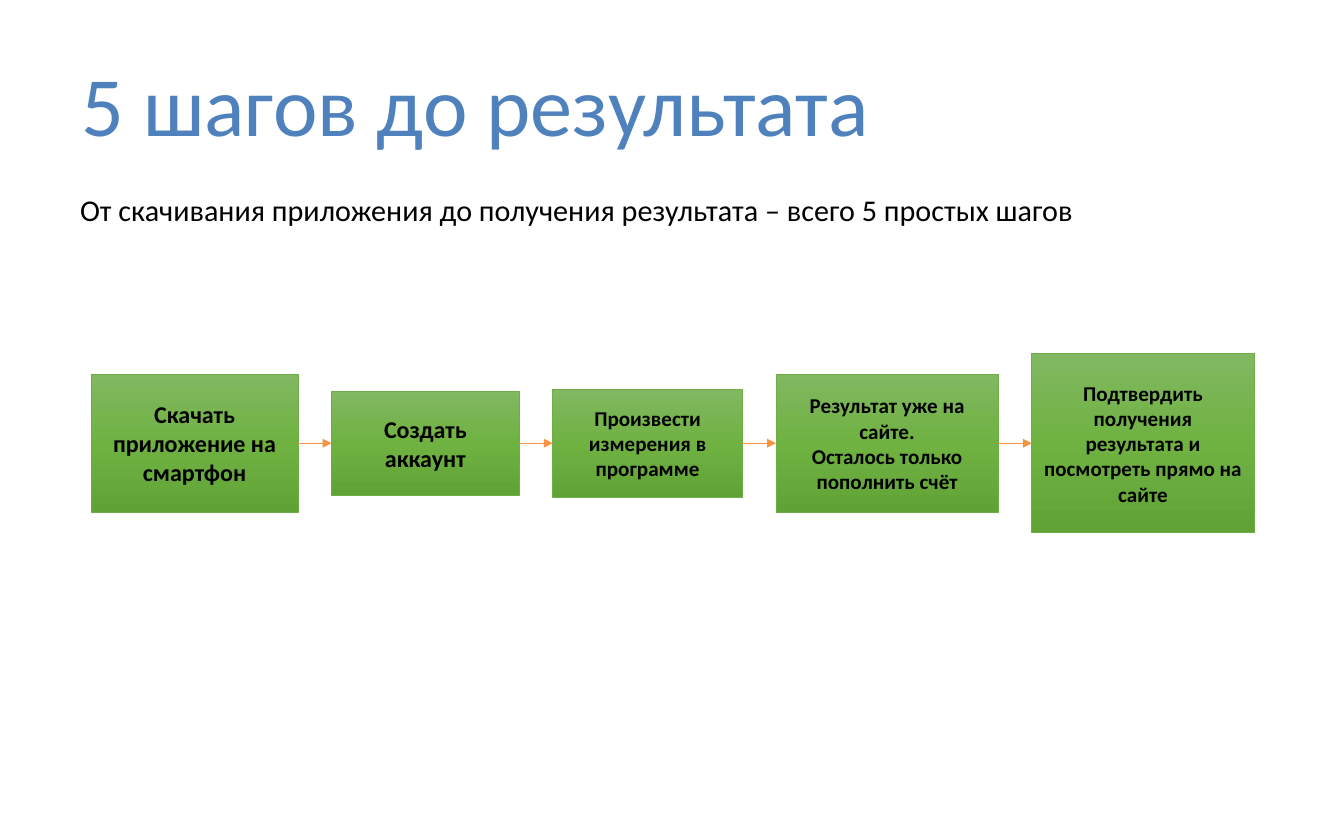
from copy import deepcopy
from dataclasses import dataclass

from pptx import Presentation
from pptx import util as u
from pptx.dml.color import RGBColor
from pptx.enum import shapes, text
from pptx.oxml import ns, xmlchemy


@dataclass(frozen=True)
class Theme:
    font: str = "Calibri"
    ink: str = "000000"
    head: str = "4F81BD"
    edge: str = "70AD47"
    arrow: str = "F69240"
    fade: tuple = ((0, "81B861"), (0.5, "6FB242"), (1, "61A235"))
    title: int = 56
    lead: int = 20
    large: int = 16
    small: int = 14


THEME = Theme()
LEFT, MID, GAP = 0.84, 4.09, 0.31

# Width, height, type size and text of each step
STEPS = (
    (1.91, 1.28, THEME.large, "Скачать приложение на смартфон"),
    (1.73, 0.96, THEME.large, "Создать аккаунт"),
    (1.75, 1.00, THEME.small, "Произвести измерения в программе"),
    (2.05, 1.28, THEME.small,
     "Результат уже на сайте.\nОсталось только пополнить счёт"),
    (2.05, 1.65, THEME.small,
     "Подтвердить получения результата и посмотреть прямо на сайте"),
)


def rgb(code):
    return RGBColor.from_string(code)


def write(frame, words, size, color, align, bold=False):
    frame.text = words
    frame.word_wrap = True
    for par in frame.paragraphs:
        par.alignment = align
        for run in par.runs:
            font = run.font
            font.name, font.size, font.bold = THEME.font, u.Pt(size), bold
            font.color.rgb = rgb(color)


def add_title(slide, words):
    title = slide.shapes.title
    title.left, title.top = u.Inches(0.62), u.Inches(0.31)
    title.width, title.height = u.Inches(11.16), u.Inches(1.27)
    frame = title.text_frame
    frame.auto_size = text.MSO_AUTO_SIZE.NONE
    frame.vertical_anchor = text.MSO_ANCHOR.MIDDLE
    frame.margin_left = frame.margin_right = u.Inches(0.13)
    frame.margin_top = frame.margin_bottom = u.Inches(0.06)
    write(frame, words, THEME.title, THEME.head, text.PP_ALIGN.LEFT)


def add_lead(slide, words):
    box = slide.shapes.add_textbox(
        u.Inches(0.64), u.Inches(1.72), u.Inches(10.16), u.Inches(0.74))
    write(box.text_frame, words, THEME.lead, THEME.ink, text.PP_ALIGN.LEFT)


def paint(box):
    """Fill the box with the three-stop vertical gradient."""
    box.fill.gradient()
    box.fill.gradient_angle = 270
    stops = box._element.spPr.find(".//" + ns.qn("a:gsLst"))
    stops.append(deepcopy(stops[0]))
    for stop, (place, color) in zip(box.fill.gradient_stops, THEME.fade):
        stop.position = place
        stop.color.rgb = rgb(color)


def add_step(slide, left, width, height, size, words):
    box = slide.shapes.add_shape(
        shapes.MSO_SHAPE.RECTANGLE, u.Inches(left),
        u.Inches(MID - height / 2), u.Inches(width), u.Inches(height))
    box.shadow.inherit = False
    paint(box)
    box.line.color.rgb = rgb(THEME.edge)
    box.line.width = u.Pt(0.5)
    box.text_frame.vertical_anchor = text.MSO_ANCHOR.MIDDLE
    write(box.text_frame, words, size, THEME.ink,
          text.PP_ALIGN.CENTER, bold=True)
    return box


def add_arrow(slide, start, end):
    arrow = slide.shapes.add_connector(
        shapes.MSO_CONNECTOR.STRAIGHT, 0, 0, 0, 0)
    arrow.begin_connect(start, 3)
    arrow.end_connect(end, 1)
    arrow.line.color.rgb = rgb(THEME.arrow)
    arrow.line.width = u.Pt(0.75)
    props = arrow._element.spPr
    tail = xmlchemy.OxmlElement("a:tailEnd")
    tail.set("type", "triangle")
    props.find(ns.qn("a:ln")).append(tail)
    props.append(xmlchemy.OxmlElement("a:effectLst"))


def main():
    deck = Presentation()
    deck.slide_width, deck.slide_height = u.Inches(12.4), u.Inches(7.64)
    slide = deck.slides.add_slide(deck.slide_layouts[5])

    # Heading
    add_title(slide, "5 шагов до результата")
    add_lead(slide, "От скачивания приложения до получения результата "
                    "– всего 5 простых шагов")

    # Row of steps, centred on one line with equal gaps
    boxes, left = [], LEFT
    for width, height, size, words in STEPS:
        boxes.append(add_step(slide, left, width, height, size, words))
        left += width + GAP

    # Arrows between neighbours
    for start, end in zip(boxes, boxes[1:]):
        add_arrow(slide, start, end)

    deck.save("out.pptx")


if __name__ == "__main__":
    main()
